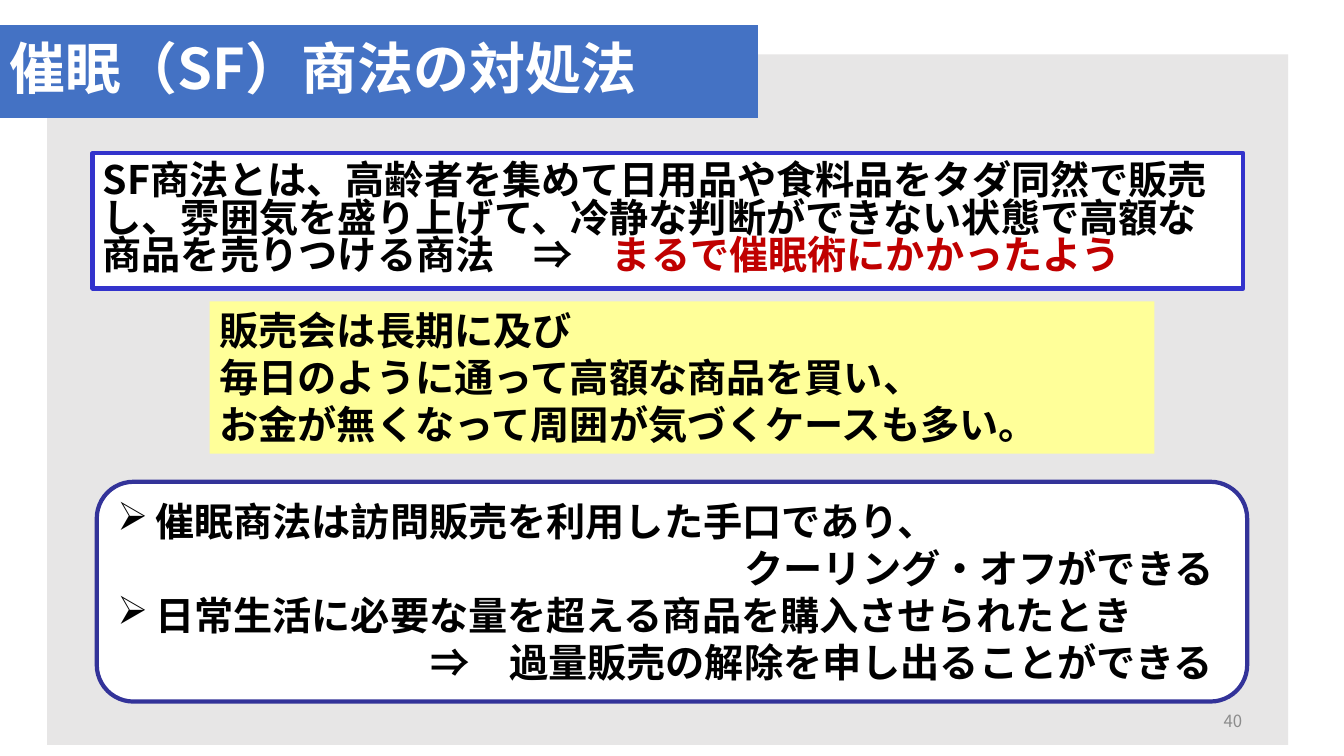
from dataclasses import dataclass

from lxml.etree import SubElement as Sub
from pptx import Presentation
from pptx.dml.color import RGBColor as RGB
from pptx.enum.shapes import MSO_SHAPE as Kind
from pptx.enum.text import MSO_ANCHOR as Anchor, PP_ALIGN as Align
from pptx.oxml.ns import qn
from pptx.util import Inches, Pt


@dataclass(frozen=True)
class Theme:
    """Colours, font and type sizes of the slide."""
    face: str = "Noto Sans CJK JP"
    head: int = 40
    body: int = 28
    small: int = 12
    white: str = "FFFFFF"
    black: str = "000000"
    grey: str = "E7E6E6"
    mute: str = "8C8C8C"
    blue: str = "4472C4"
    edge: str = "3333CC"
    navy: str = "333399"
    pale: str = "FFFF99"
    red: str = "C00000"


T = Theme()
WIDE, HIGH = Inches(13.333), Inches(7.5)
HANG = Pt(27)


def place(x, y, w, h):
    """Turn percentages of the slide into lengths."""
    return [int(share * full / 100)
            for share, full in zip((x, y, w, h), (WIDE, HIGH) * 2)]


def panel(slide, area, fill, line=None, width=0, kind=Kind.RECTANGLE):
    """Add a flat filled shape with an optional outline."""
    shape = slide.shapes.add_shape(kind, *place(*area))
    shape.shadow.inherit = False
    shape.fill.solid()
    shape.fill.fore_color.rgb = RGB.from_string(fill)
    if line:
        shape.line.color.rgb = RGB.from_string(line)
        shape.line.width = Pt(width)
    else:
        shape.line.fill.background()
    return shape


def style(para, size, color, bold=True, align=Align.LEFT):
    """Set the font and alignment of a paragraph."""
    para.alignment = align
    font = para.font
    font.size, font.bold, font.name = Pt(size), bold, T.face
    font.color.rgb = RGB.from_string(color)
    base = para._p.pPr.find(qn("a:defRPr"))
    Sub(base, qn("a:ea")).set("typeface", T.face)


def bullet(para):
    """Give a paragraph a hanging arrow bullet."""
    props = para._p.get_or_add_pPr()
    props.set("marL", str(HANG))
    props.set("indent", str(-HANG))
    Sub(props, qn("a:buChar")).set("char", "➢")


def inset(para, count):
    """Indent a paragraph by a count of body characters."""
    props = para._p.get_or_add_pPr()
    props.set("marL", str(Pt(T.body * count)))
    props.set("indent", "0")


def write(shape, lines, size=T.body, color=T.black, anchor=Anchor.MIDDLE,
          space=1.0, **look):
    """Write one paragraph per line and return the paragraphs."""
    frame = shape.text_frame
    frame.word_wrap = True
    frame.vertical_anchor = anchor
    paras = []
    for i, (text, indent) in enumerate(lines):
        para = frame.add_paragraph() if i else frame.paragraphs[0]
        para.add_run().text = text
        para.line_spacing = space
        if indent == "bullet":
            bullet(para)
        elif indent:
            inset(para, indent)
        style(para, size, color, **look)
        paras.append(para)
    return paras


def main():
    """Build the slide and save it."""
    deck = Presentation()
    deck.slide_width, deck.slide_height = WIDE, HIGH
    slide = deck.slides.add_slide(deck.slide_layouts[6])

    panel(slide, (3.5, 7.2, 92.35, 91.33), T.grey)
    title = panel(slide, (0, 3.33, 56.4, 12.27), T.blue)
    write(title, [("催眠（SF）商法の対処法", 0)], T.head, T.white, space=0.9)

    intro = panel(slide, (6.9, 20.27, 85.6, 17.87), T.white, T.edge, 3.25)
    para, = write(intro, [(
        "SF商法とは、高齢者を集めて日用品や食料品をタダ同然で販売し、"
        "雰囲気を盛り上げて、冷静な判断ができない状態で高額な"
        "商品を売りつける商法　⇒　", 0)], space=0.8)
    run = para.add_run()
    run.text = "まるで催眠術にかかったよう"
    run.font.color.rgb = RGB.from_string(T.red)

    case = panel(slide, (15.6, 39.87, 70.3, 20.13), T.pale)
    write(case, [("販売会は長期に及び", 0),
                 ("毎日のように通って高額な商品を買い、", 0),
                 ("お金が無くなって周囲が気づくケースも多い。", 0)],
          anchor=Anchor.TOP)

    advice = panel(slide, (7.2, 63.73, 85.6, 29.07), T.white, T.navy, 3,
                   Kind.ROUNDED_RECTANGLE)
    write(advice, [
        ("催眠商法は訪問販売を利用した手口であり、", "bullet"),
        ("クーリング・オフができる", 16),
        ("日常生活に必要な量を超える商品を購入させられたとき", "bullet"),
        ("⇒　過量販売の解除を申し出ることができる", 8)])

    page = slide.shapes.add_textbox(*place(70.67, 92.67, 22.5, 5.33))
    write(page, [("40", 0)], T.small, T.mute, bold=False, align=Align.RIGHT)
    deck.save("out.pptx")


if __name__ == "__main__":
    main()
